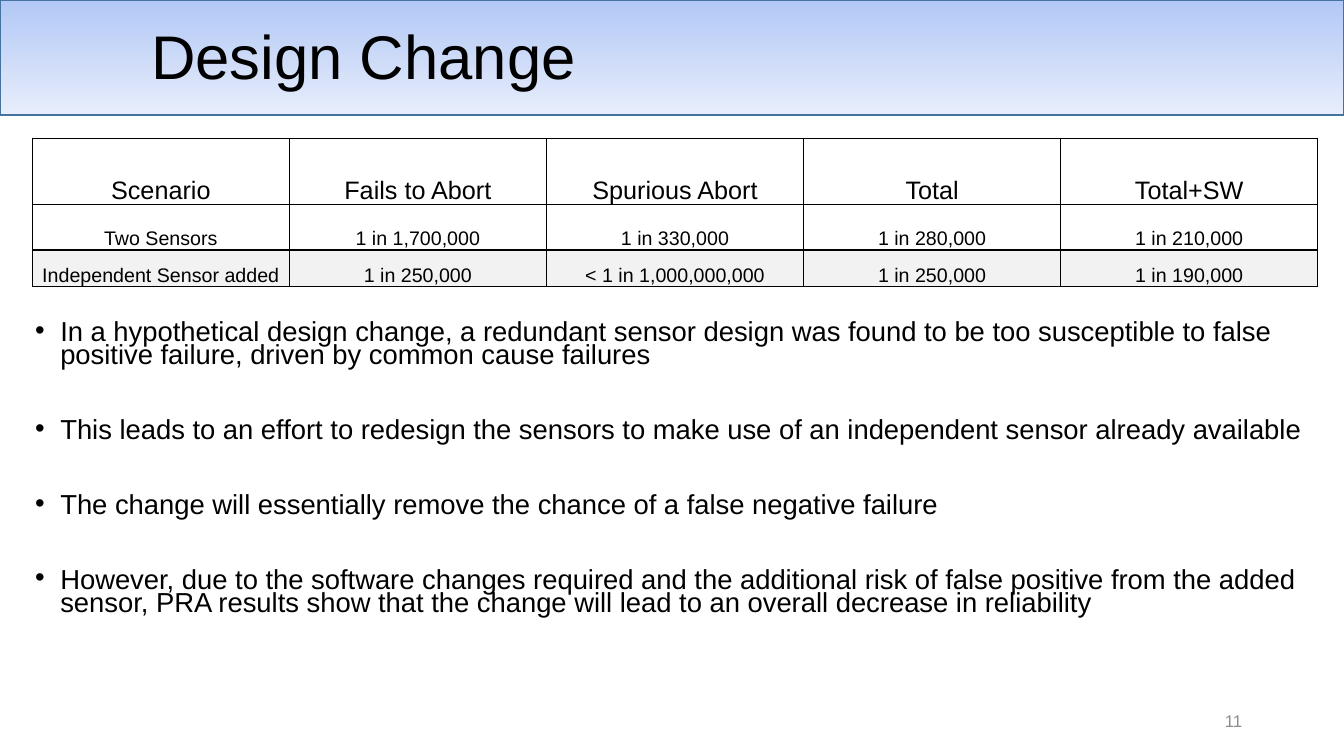
from lxml.etree import SubElement
from pptx import Presentation
from pptx.dml.color import RGBColor
from pptx.enum.shapes import MSO_SHAPE
from pptx.enum.text import MSO_ANCHOR, PP_ALIGN
from pptx.oxml.ns import qn
from pptx.util import Inches, Pt

COLORS = {
    "text": "000000",
    "page": "8C8C8C",
    "banner_top": "B2C8F5",
    "banner_bottom": "E7EDFB",
    "banner_line": "43739E",
    "border": "000000",
    "shade": "F2F2F2",
}
SCENARIOS = [
    ["Scenario", "Fails to Abort", "Spurious Abort", "Total", "Total+SW"],
    ["Two Sensors", "1 in 1,700,000", "1 in 330,000", "1 in 280,000", "1 in 210,000"],
    ["Independent Sensor added", "1 in 250,000", "< 1 in 1,000,000,000",
     "1 in 250,000", "1 in 190,000"],
]
ROW_HEIGHTS = [0.66, 0.45, 0.36]
ROW_SIZES = [18, 14, 14]
ROW_SHADES = [None, None, "shade"]
COLUMN_WIDTH = 2.55
FINDINGS = [
    "In a hypothetical design change, a redundant sensor design was found to be too "
    "susceptible to false positive failure, driven by common cause failures",
    "This leads to an effort to redesign the sensors to make use of an independent "
    "sensor already available",
    "The change will essentially remove the chance of a false negative failure",
    "However, due to the software changes required and the additional risk of false "
    "positive from the added sensor, PRA results show that the change will lead to an "
    "overall decrease in reliability",
]


def rgb(name):
    """Return the named colour."""
    return RGBColor.from_string(COLORS[name])


def apply_format(target, values):
    """Set each attribute listed in values."""
    for attribute, value in values.items():
        setattr(target, attribute, value)


def style_font(font, size, color="text"):
    """Set typeface, size and colour."""
    apply_format(font, {"name": "Arial", "size": Pt(size), "bold": False})
    font.color.rgb = rgb(color)


def add_banner(slide):
    """Draw the gradient band behind the title."""
    banner = slide.shapes.add_shape(
        MSO_SHAPE.RECTANGLE, 0, 0, Inches(13.33), Inches(1.14))
    banner.shadow.inherit = False
    banner.fill.gradient()
    banner.fill.gradient_angle = 270
    for stop, name in zip(banner.fill.gradient_stops, ["banner_top", "banner_bottom"]):
        stop.color.rgb = rgb(name)
    banner.line.color.rgb = rgb("banner_line")
    banner.line.width = Pt(1)


def add_text(slide, box, lines, size, color="text", anchor=MSO_ANCHOR.MIDDLE,
             bulleted=False, **paragraph_format):
    """Add a wrapped text box with one paragraph per line."""
    frame = slide.shapes.add_textbox(*map(Inches, box)).text_frame
    apply_format(frame, {"word_wrap": True, "vertical_anchor": anchor})
    for index, line in enumerate(lines):
        paragraph = frame.add_paragraph() if index else frame.paragraphs[0]
        paragraph.text = line
        apply_format(paragraph, paragraph_format)
        if bulleted:
            paragraph.space_before = Pt(37 if index else 0)
            add_bullet(paragraph)
        style_font(paragraph.font, size, color)


def add_bullet(paragraph):
    """Give a paragraph a hanging round bullet."""
    properties = paragraph._p.get_or_add_pPr()
    properties.set("marL", str(Inches(0.25)))
    properties.set("indent", str(Inches(-0.25)))
    SubElement(properties, qn("a:buFont"), typeface="Arial")
    SubElement(properties, qn("a:buChar"), char="•")


def add_borders(cell):
    """Draw a thin line on every side of a cell."""
    properties = cell._tc.get_or_add_tcPr()
    for side in ("lnL", "lnR", "lnT", "lnB"):
        border = SubElement(properties, qn(f"a:{side}"), w=str(Pt(1)))
        fill = SubElement(border, qn("a:solidFill"))
        SubElement(fill, qn("a:srgbClr"), val=COLORS["border"])


def fill_cell(cell, text, size, shade):
    """Write and format one table cell."""
    edge = Inches(0.01)
    apply_format(cell, {
        "text": text, "vertical_anchor": MSO_ANCHOR.BOTTOM, "margin_left": edge,
        "margin_right": edge, "margin_top": edge, "margin_bottom": 0})
    add_borders(cell)
    if shade:
        cell.fill.solid()
        cell.fill.fore_color.rgb = rgb(shade)
    else:
        cell.fill.background()
    paragraph = cell.text_frame.paragraphs[0]
    paragraph.alignment = PP_ALIGN.CENTER
    style_font(paragraph.font, size)


def add_scenario_table(slide):
    """Add the table of failure odds."""
    columns = len(SCENARIOS[0])
    table = slide.shapes.add_table(
        len(SCENARIOS), columns, Inches(0.32), Inches(1.37),
        Inches(COLUMN_WIDTH * columns), Inches(sum(ROW_HEIGHTS))).table
    apply_format(table, {"first_row": False, "horz_banding": False})
    for column in table.columns:
        column.width = Inches(COLUMN_WIDTH)
    for row, height, texts, size, shade in zip(
            table.rows, ROW_HEIGHTS, SCENARIOS, ROW_SIZES, ROW_SHADES):
        row.height = Inches(height)
        for cell, text in zip(row.cells, texts):
            fill_cell(cell, text, size, shade)


def main():
    """Build and save the slide."""
    deck = Presentation()
    apply_format(deck, {"slide_width": Inches(13.33), "slide_height": Inches(7.5)})
    slide = deck.slides.add_slide(deck.slide_layouts[6])
    add_banner(slide)
    add_text(slide, (1.4, 0.13, 9.32, 0.93), ["Design Change"], 44, line_spacing=0.9)
    add_text(slide, (0.25, 3.16, 12.9, 3.67), FINDINGS, 19.6,
             anchor=MSO_ANCHOR.TOP, bulleted=True, line_spacing=0.7)
    add_text(slide, (9.42, 6.95, 3, 0.4), ["11"], 12, "page", alignment=PP_ALIGN.RIGHT)
    add_scenario_table(slide)
    deck.save("out.pptx")


if __name__ == "__main__":
    main()
